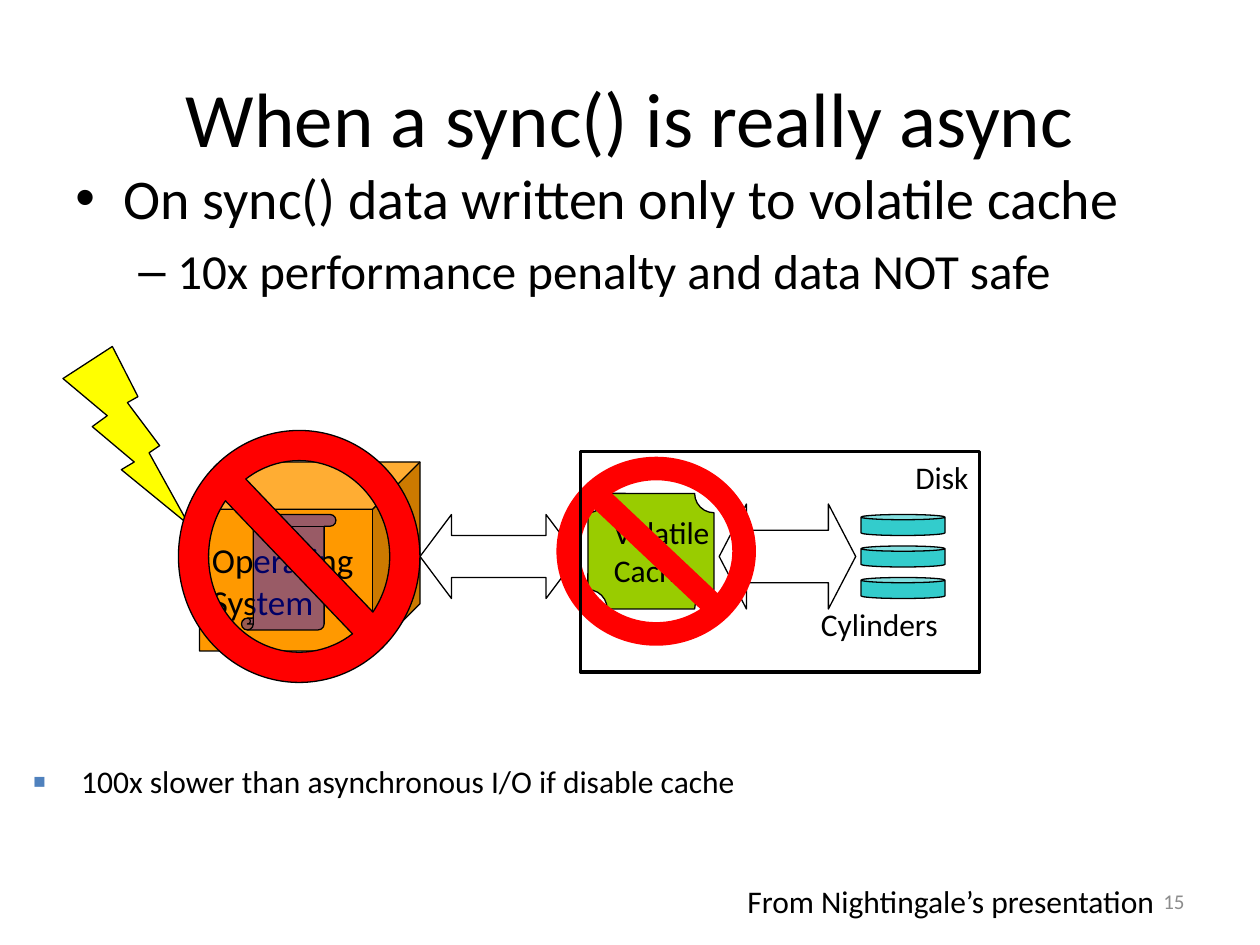
from dataclasses import dataclass

from lxml.etree import SubElement
from pptx import Presentation
from pptx.dml.color import RGBColor
from pptx.enum.shapes import MSO_SHAPE
from pptx.enum.text import MSO_ANCHOR, PP_ALIGN
from pptx.oxml.ns import qn
from pptx.util import Inches, Pt

CELL = 1 / 12
COLUMNS, ROWS = 120, 90
FONT = "Calibri"
COLORS = {
    "ink": "000000",
    "number": "8C8C8C",
    "marker": "4F81BD",
    "cache": "99CC00",
    "system": "FF9900",
    "log": "0000FF",
    "bolt": "FFFF00",
    "ban": "FF0000",
    "cylinder": "33CCCC",
}


@dataclass
class Box:
    left: float
    top: float
    width: float
    height: float

    def inner(self, left, top, width, height):
        return Box(self.left + left, self.top + top, width, height)

    def lengths(self):
        cells = (self.left, self.top, self.width, self.height)
        return [Inches(cell * CELL) for cell in cells]


def color(name):
    return RGBColor.from_string(COLORS[name])


def write(para, text, size, ink="ink", align=PP_ALIGN.LEFT):
    para.text = text
    para.alignment = align
    for span in para.runs:
        for name, value in {"name": FONT, "size": Pt(size)}.items():
            setattr(span.font, name, value)
        span.font.color.rgb = color(ink)


def add_bullet(para, mark, margin, hanging, tint="ink", percent=100):
    properties = para._p.get_or_add_pPr()
    properties.set("marL", str(Inches(margin)))
    properties.set("indent", str(-Inches(hanging)))
    spacing = SubElement(properties, qn("a:spcBef"))
    SubElement(spacing, qn("a:spcPct"), val="20000")
    bullet_color = SubElement(properties, qn("a:buClr"))
    SubElement(bullet_color, qn("a:srgbClr"), val=COLORS[tint])
    SubElement(properties, qn("a:buSzPct"), val=str(percent * 1000))
    SubElement(properties, qn("a:buFont"), typeface="Arial")
    SubElement(properties, qn("a:buChar"), char=mark)


def add_text(page, box, text, size, anchor=MSO_ANCHOR.TOP, wrap=True, **style):
    frame = page.shapes.add_textbox(*box.lengths()).text_frame
    for name, value in {"word_wrap": wrap, "vertical_anchor": anchor}.items():
        setattr(frame, name, value)
    write(frame.paragraphs[0], text, size, **style)
    return frame


def add_figure(shapes, kind, box, fill=None, line=0.75, adjust=(), alpha=None):
    shape = shapes.add_shape(kind, *box.lengths())
    shape.shadow.inherit = False
    for index, value in enumerate(adjust):
        shape.adjustments[index] = value
    if fill:
        shape.fill.solid()
        shape.fill.fore_color.rgb = color(fill)
    else:
        shape.fill.background()
    if alpha:
        tone = shape._element.spPr.find(qn("a:solidFill"))[0]
        SubElement(tone, qn("a:alpha"), val=str(alpha * 1000))
    if line:
        shape.line.color.rgb = color("ink")
        shape.line.width = Pt(line)
    else:
        shape.line.fill.background()
    return shape


def add_label(shape, text, size):
    frame = shape.text_frame
    settings = {"word_wrap": False, "vertical_anchor": MSO_ANCHOR.MIDDLE}
    for name, value in settings.items():
        setattr(frame, name, value)
    write(frame.paragraphs[0], text, size)


def draw_heading(page, box):
    add_text(page, box.inner(0, 0, 108, 15), "When a sync() is really async", 44,
             MSO_ANCHOR.MIDDLE, align=PP_ALIGN.CENTER)
    frame = add_text(page, box.inner(0, 11.4, box.width, 26),
                     "On sync() data written only to volatile cache", 32)
    add_bullet(frame.paragraphs[0], "•", 0.38, 0.38)
    detail = frame.add_paragraph()
    detail.level = 1
    write(detail, "10x performance penalty and data NOT safe", 28)
    add_bullet(detail, "–", 0.81, 0.31)


def draw_host(page, box):
    shapes = page.shapes
    system = add_figure(shapes, MSO_SHAPE.CUBE, box.inner(13, 11, 21, 18),
                        "system", adjust=[0.25])
    add_label(system, "Operating\nSystem", 20)
    add_figure(shapes, MSO_SHAPE.LEFT_RIGHT_ARROW, box.inner(34, 16, 15, 8),
               adjust=[0.5, 0.375])
    add_figure(shapes, MSO_SHAPE.VERTICAL_SCROLL, box.inner(17, 16, 9, 11),
               "log", adjust=[0.125], alpha=40)
    add_figure(shapes, MSO_SHAPE.LIGHTNING_BOLT, box.inner(0, 0, 12, 17), "bolt")
    add_figure(shapes, MSO_SHAPE.NO_SYMBOL, box.inner(11, 8, 23, 24),
               "ban", adjust=[0.125])


def draw_disk(page, box):
    shapes = page.shapes
    cache = add_figure(shapes, MSO_SHAPE.PLAQUE, box.inner(3, 4, 12, 11),
                       "cache", adjust=[0.167])
    add_label(cache, "Volatile\nCache", 18)
    add_figure(shapes, MSO_SHAPE.LEFT_RIGHT_ARROW, box.inner(15.5, 5, 13, 10),
               adjust=[0.5, 0.26])
    add_figure(shapes, MSO_SHAPE.NO_SYMBOL, box.inner(0, 0.5, 19, 18),
               "ban", line=None, adjust=[0.125])
    cylinders = shapes.add_group_shape().shapes
    for row in (12, 9, 6):
        add_figure(cylinders, MSO_SHAPE.CAN, box.inner(29, row, 8, 2),
                   "cylinder", adjust=[0.25])
    add_text(page, box.inner(24, 14, 18, 4.8), "Cylinders", 18)
    add_figure(shapes, MSO_SHAPE.RECTANGLE,
               box.inner(2.3, 0, box.width - 2.3, box.height), line=2)
    add_text(page, box.inner(33, 0, 13, 4.8), "Disk", 18)


def draw_remark(page, box):
    frame = add_text(page, box, "100x slower than asynchronous I/O if disable cache", 18)
    add_bullet(frame.paragraphs[0], "■", 0.38, 0.38, "marker", 65)


def draw_footer(page, box):
    add_text(page, box.inner(0, 0, 41.6, box.height),
             "From Nightingale’s presentation", 18, wrap=False)
    add_text(page, box.inner(16, 0, 28, box.height), "15", 12,
             MSO_ANCHOR.MIDDLE, ink="number", align=PP_ALIGN.RIGHT)


def main():
    deck = Presentation()
    deck.slide_width = Inches(COLUMNS * CELL)
    deck.slide_height = Inches(ROWS * CELL)
    page = deck.slides.add_slide(deck.slide_layouts[6])
    draw_heading(page, Box(6, 3.6, 112, 37.4))
    draw_host(page, Box(6, 33, 49, 32))
    draw_disk(page, Box(53, 43, 40.3, 21))
    draw_remark(page, Box(2, 72, 115, 8.4))
    draw_footer(page, Box(70, 83.4, 44, 4.8))
    deck.save("out.pptx")


if __name__ == "__main__":
    main()
